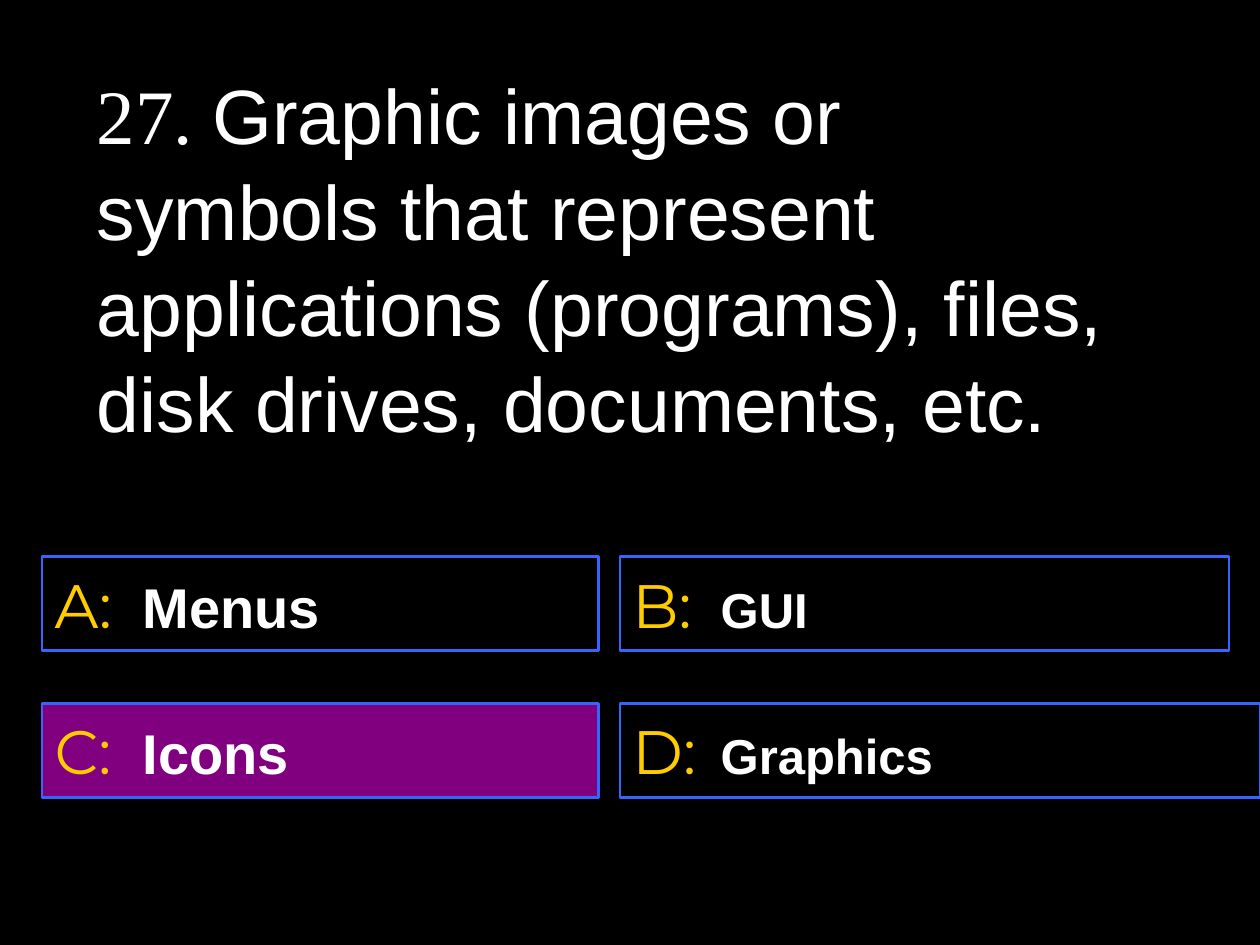
from lxml.etree import SubElement
from pptx import Presentation
from pptx.dml.color import RGBColor
from pptx.enum.shapes import MSO_SHAPE as Shape
from pptx.enum.text import MSO_ANCHOR as Anchor, MSO_AUTO_SIZE as Fit, PP_ALIGN as Align
from pptx.oxml.ns import qn
from pptx.util import Cm, Pt

LEFT, RIGHT = 0.85, 12.5
UPPER, LOWER = 11.22, 14.18
HEIGHT = 1.9
INDENT = Cm(1.78)

NUMBER = dict(name="Times New Roman", size=Pt(44), bold=False)
QUESTION = dict(NUMBER, name="Arial")
LETTER = dict(name="Montserrat", size=Pt(35), bold=False)
LARGE = dict(name="Arial", size=Pt(32), bold=True)
SMALL = dict(LARGE, size=Pt(28))
FRAME = dict(word_wrap=True, auto_size=Fit.NONE, vertical_anchor=Anchor.MIDDLE)

# letter, answer, answer format, left, top, width, fill
CHOICES = [
    ("A:", "Menus", LARGE, LEFT, UPPER, 11.22, None),
    ("B:", "GUI", SMALL, RIGHT, UPPER, 12.28, None),
    ("C:", "Icons", LARGE, LEFT, LOWER, 11.22, "FF00FF"),
    ("D:", "Graphics", SMALL, RIGHT, LOWER, 12.9, "000000"),
]


def apply(target, values):
    for key, value in values.items():
        setattr(target, key, value)


def paint(color, code):
    color.rgb = RGBColor.from_string(code)


def fill_half(shape, code):
    """Fill the shape with a colour at 50 % opacity."""
    shape.fill.solid()
    paint(shape.fill.fore_color, code)
    tint = shape.fill._xPr.find(qn("a:solidFill"))[0]
    SubElement(tint, qn("a:alpha"), val="50000")


def add_run(para, text, style, code="FFFFFF"):
    run = para.add_run()
    run.text = text
    apply(run.font, style)
    paint(run.font.color, code)


def set_title(slide):
    title = slide.shapes.title
    apply(title, dict(left=Cm(1.7), top=Cm(1.78), width=Cm(21.59), height=Cm(6.77)))
    apply(title.text_frame, FRAME)
    para = title.text_frame.paragraphs[0]
    apply(para, dict(alignment=Align.LEFT, line_spacing=1.04))
    add_run(para, "27. ", NUMBER)
    add_run(para, "Graphic images or symbols that represent applications "
                  "(programs), files, disk drives, documents, etc.", QUESTION)


def add_choice(slide, letter, answer, style, left, top, width, code):
    box = slide.shapes.add_shape(
        Shape.RECTANGLE, Cm(left), Cm(top), Cm(width), Cm(HEIGHT))
    box.shadow.inherit = False
    if code:
        fill_half(box, code)
    else:
        box.fill.background()
    paint(box.line.color, "3366FF")
    box.line.width = Pt(1.5)
    apply(box.text_frame, FRAME)
    para = box.text_frame.paragraphs[0]
    para.alignment = Align.LEFT
    # A hanging indent lines up the answers after the tab
    props = para._p.get_or_add_pPr()
    props.set("marL", str(INDENT))
    props.set("indent", str(-INDENT))
    add_run(para, letter + "\t", LETTER, "FFCC00")
    add_run(para, answer, style)


def main():
    deck = Presentation()
    apply(deck, dict(slide_width=Cm(25.4), slide_height=Cm(19.05)))
    slide = deck.slides.add_slide(deck.slide_layouts[5])
    back = slide.background.fill
    back.solid()
    paint(back.fore_color, "000000")
    set_title(slide)
    for choice in CHOICES:
        add_choice(slide, *choice)
    deck.save("out.pptx")


if __name__ == "__main__":
    main()
